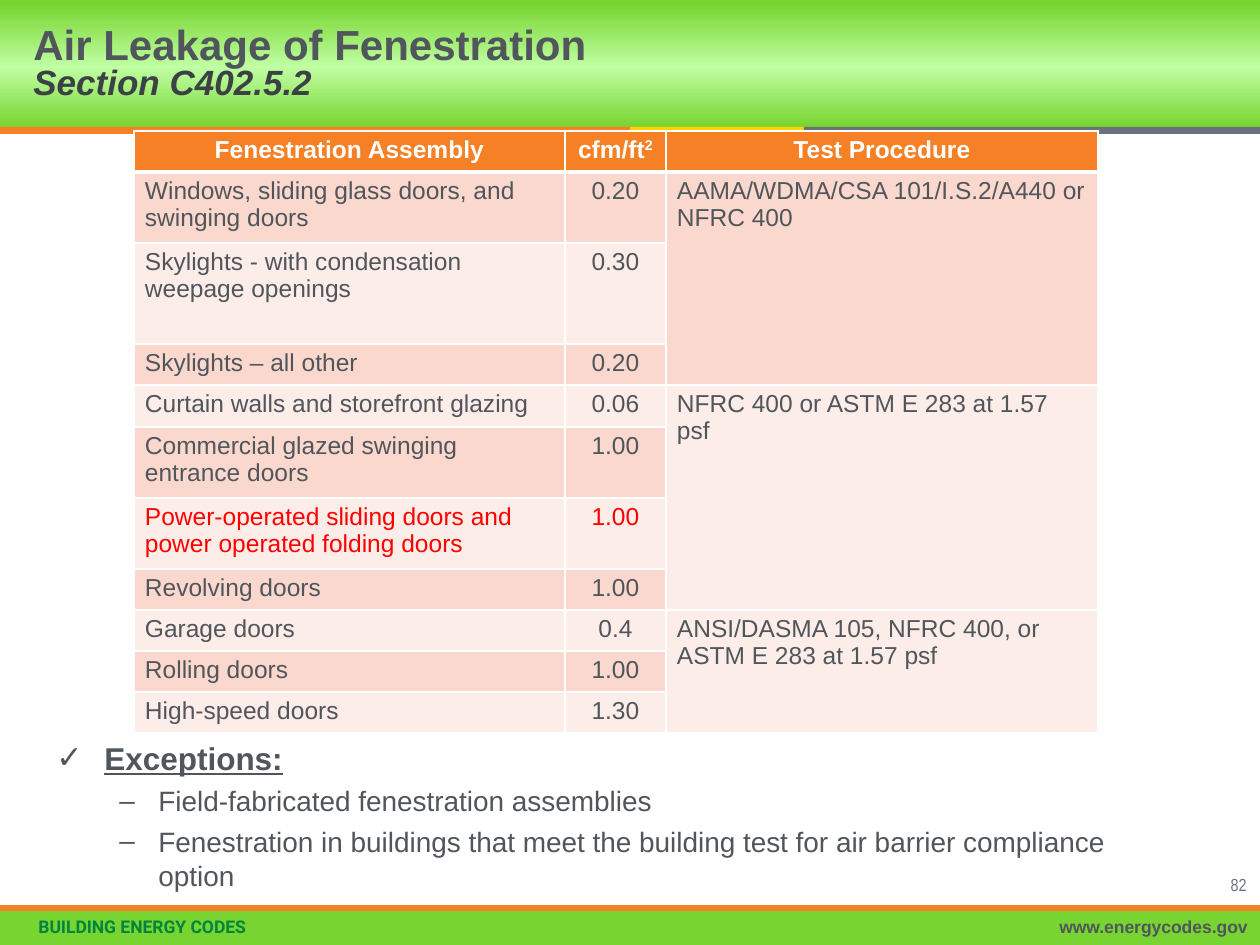
"""Build the slide on air leakage limits for fenestration assemblies."""
from copy import deepcopy
from lxml.etree import SubElement as Sub
from pptx import Presentation
from pptx.dml.color import RGBColor as RGB
from pptx.enum.shapes import MSO_SHAPE as Shape
from pptx.enum.text import MSO_ANCHOR as Anchor, PP_ALIGN as Align
from pptx.oxml import parse_xml
from pptx.oxml.ns import nsdecls, qn
from pptx.util import Pt

PX = 914400 / 126
GRAY = RGB(0x50, 0x56, 0x5C)
DARK = RGB(0x3C, 0x41, 0x45)
SLATE = RGB(0x6A, 0x73, 0x7B)
GREEN = RGB(0x78, 0xD4, 0x30)
LIGHT = RGB(0xC0, 0xFF, 0xA4)
FOREST = RGB(0x00, 0x85, 0x3F)
ORANGE = RGB(0xF5, 0x80, 0x25)
YELLOW = RGB(0xFF, 0xD2, 0x00)
ROSE = RGB(0xFB, 0xD8, 0xCD)
PALE = RGB(0xFD, 0xED, 0xE8)
RED = RGB(0xFF, 0x00, 0x00)
WHITE = RGB(0xFF, 0xFF, 0xFF)


def emu(*nums):
    return [round(n * PX) for n in nums]


def style(para, size, color, bold=False, face="Arial"):
    for run in para.runs:
        font = run.font
        font.name, font.size, font.bold = face, Pt(size), bold
        font.color.rgb = color


prs = Presentation()
prs.slide_width, prs.slide_height = emu(1260, 945)
slide = prs.slides.add_slide(prs.slide_layouts[6])
shapes = slide.shapes

bars = [
    (0, 0, 1260, 127, GREEN),
    (0, 911, 1260, 34, GREEN),
    (0, 127, 630, 7, ORANGE),
    (630, 127, 174, 7, YELLOW),
    (804, 127, 456, 7, SLATE),
    (0, 905, 1260, 6, ORANGE),
]
for *place, color in bars:
    bar = shapes.add_shape(Shape.RECTANGLE, *emu(*place))
    bar.shadow.inherit = False
    bar.line.fill.background()
    bar.fill.solid()
    bar.fill.fore_color.rgb = color

band = shapes[0].fill
band.gradient()
band.gradient_angle = 90
first = shapes[0]._element.find(".//" + qn("a:gs"))
first.addnext(deepcopy(first))
for stop, (spot, color) in zip(band.gradient_stops, [(0, GREEN), (0.47, LIGHT), (0.97, GREEN)]):
    stop.position = spot
    stop.color.rgb = color

labels = [
    (26, 912, 900, 33, "BUILDING ENERGY CODES", Align.LEFT, FOREST, True, "Roboto"),
    (755, 912, 505, 33, "www.energycodes.gov", Align.RIGHT, GRAY, True, "Arial"),
    (1169, 870, 90, 23, "82", Align.RIGHT, SLATE, False, "Arial Narrow"),
]
for *place, text, align, color, bold, face in labels:
    frame = shapes.add_textbox(*emu(*place)).text_frame
    frame.word_wrap = True
    frame.text = text
    para = frame.paragraphs[0]
    para.alignment = align
    para.line_spacing = 0.9
    style(para, 10, color, bold, face)

frame = shapes.add_textbox(*emu(21, 0, 788, 130)).text_frame
frame.word_wrap = True
frame.vertical_anchor = Anchor.MIDDLE
frame.text = "Air Leakage of Fenestration\nSection C402.5.2"
title, sub = frame.paragraphs
style(title, 24, GRAY, True)
style(sub, 20, DARK, True)
sub.runs[0].font.italic = True
title.line_spacing = sub.line_spacing = 0.8

rows = [
    (41, "Fenestration Assembly", "cfm/ft", "Test Procedure"),
    (71, "Windows, sliding glass doors, and swinging doors", "0.20",
     "AAMA/WDMA/CSA 101/I.S.2/A440 or NFRC 400"),
    (101, "Skylights - with condensation weepage openings", "0.30", ""),
    (41, "Skylights – all other", "0.20", ""),
    (42, "Curtain walls and storefront glazing", "0.06", "NFRC 400 or ASTM E 283 at 1.57 psf"),
    (71, "Commercial glazed swinging entrance doors", "1.00", ""),
    (71, "Power-operated sliding doors and power operated folding doors", "1.00", ""),
    (41, "Revolving doors", "1.00", ""),
    (41, "Garage doors", "0.4", "ANSI/DASMA 105, NFRC 400, or ASTM E 283 at 1.57 psf"),
    (41, "Rolling doors", "1.00", ""),
    (41, "High-speed doors", "1.30", ""),
]
table = shapes.add_table(len(rows), 3, *emu(134, 131, 964, 602)).table
table.horz_banding = False
for col, width in zip(table.columns, emu(431, 101, 432)):
    col.width = width
for r, (high, *texts) in enumerate(rows):
    table.rows[r].height = emu(high)[0]
    for c, text in enumerate(texts):
        cell = table.cell(r, c)
        cell.margin_left, cell.margin_top, cell.margin_right, cell.margin_bottom = emu(11, 5, 11, 5)
        props = cell._tc.get_or_add_tcPr()
        for side in "LRTB":
            wide = 3 if (r, side) in [(0, "B"), (1, "T")] else 1
            props.append(parse_xml(
                f'<a:ln{side} {nsdecls("a")} w="{wide * 12700}"><a:solidFill>'
                f'<a:srgbClr val="{WHITE}"/></a:solidFill></a:ln{side}>'))
        cell.fill.solid()
        cell.fill.fore_color.rgb = ORANGE if r == 0 else ROSE if r % 2 else PALE
        if not text:
            continue
        cell.text = text
        para = cell.text_frame.paragraphs[0]
        if (r, c) == (0, 1):
            power = para.add_run()
            power.text = "2"
            power.font._element.set("baseline", "30000")
        para.alignment = Align.CENTER if r == 0 or c == 1 else Align.LEFT
        style(para, 14, WHITE if r == 0 else RED if r == 6 and c < 2 else GRAY, r == 0)
for top, end in [(1, 3), (4, 7), (8, 10)]:
    table.cell(top, 2).merge(table.cell(end, 2))

frame = shapes.add_textbox(*emu(44, 733, 1144, 171)).text_frame
frame.word_wrap = True
frame.text = "\n".join([
    "Exceptions:",
    "Field-fabricated fenestration assemblies",
    "Fenestration in buildings that meet the building test for air barrier compliance option",
])
for i, para in enumerate(frame.paragraphs):
    left, hang, mark, size = (102, 39, "–", 16) if i else (48, 48, "✓", 18)
    para.level = min(i, 1)
    props = para._p.get_or_add_pPr()
    props.set("marL", str(emu(left)[0]))
    props.set("indent", str(-emu(hang)[0]))
    Sub(props, qn("a:buFont"), typeface="Arial")
    Sub(props, qn("a:buChar"), char=mark)
    style(para, size, GRAY, i == 0)
    if i:
        para.space_before = Pt(4)
frame.paragraphs[0].runs[0].font.underline = True

prs.save("out.pptx")
